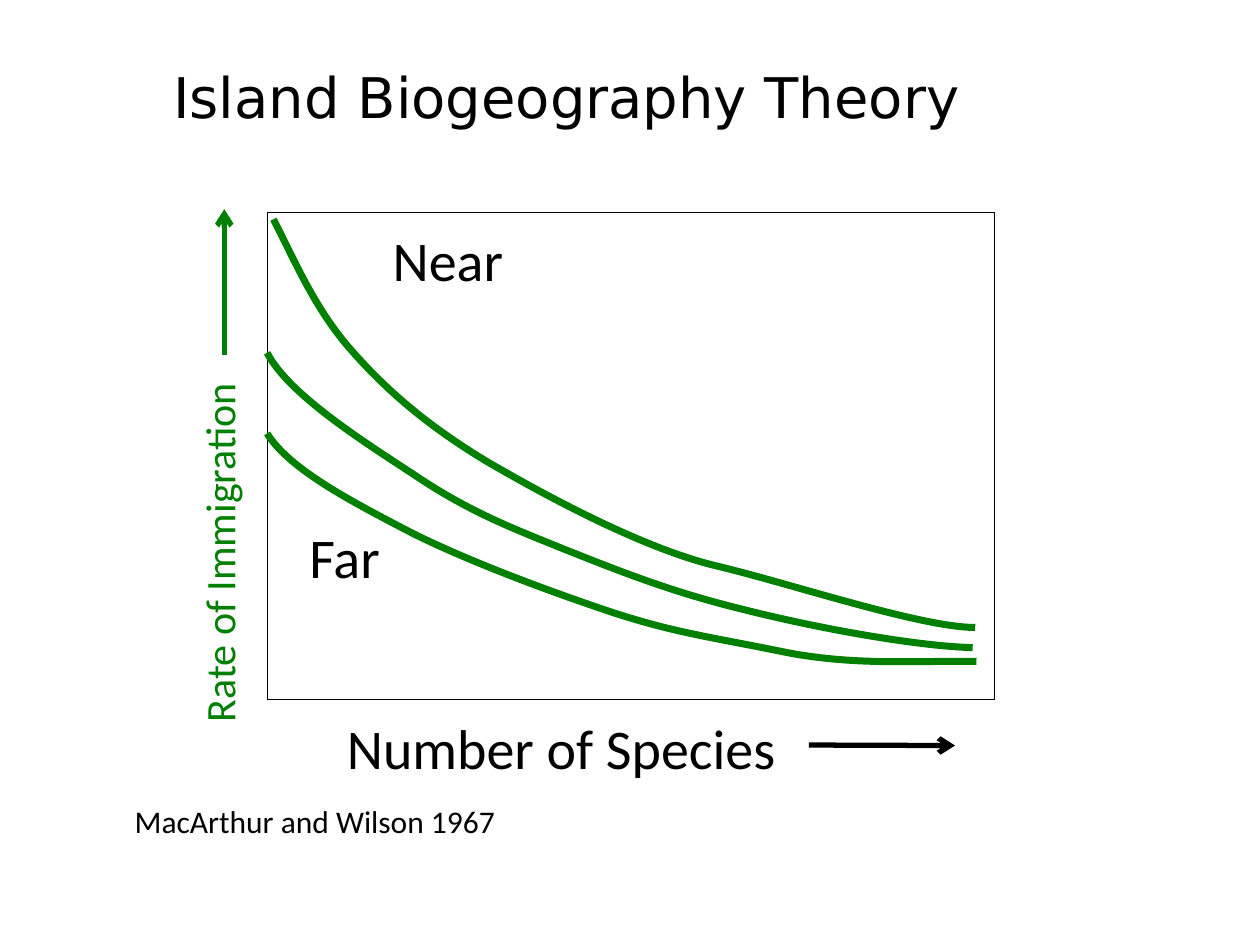
from dataclasses import dataclass

from lxml import etree
from pptx import Presentation
from pptx import util as u
from pptx.dml.color import RGBColor
from pptx.enum import shapes, text
from pptx.oxml.ns import qn

COLORS = {"black": "000000", "green": "008000"}
# The slide is a grid of 100 columns by 75 rows
CELL = u.Inches(0.1)

Point = tuple[float, float]


@dataclass
class Label:
    words: str
    box: tuple[float, float, float, float]  # column, row, columns, rows
    size: int = 32
    color: str = "black"
    align: text.PP_ALIGN = text.PP_ALIGN.LEFT
    rotation: int = 0


@dataclass
class Arrow:
    start: Point
    end: Point
    color: str


LABELS = [
    Label("Number of Species", (26.55, 56.15, 36.8, 6.4)),
    Label("Rate of Immigration", (2.75, 41.2, 29.2, 5), 24, "green", rotation=270),
    Label("MacArthur and Wilson 1967", (9.7, 63.15, 40.8, 5), 18),
    Label("Near", (29.85, 17.4, 11.4, 6.4), align=text.PP_ALIGN.CENTER),
    Label("Far", (23.45, 41, 7.8, 6.4), align=text.PP_ALIGN.CENTER),
]

ARROWS = [
    Arrow((64.2, 59.13), (75.8, 59.17), "black"),
    Arrow((17.8, 28.2), (17.8, 16.6), "green"),
]

# Each curve: a start point, then two control points and an end point per segment
CURVES: list[list[Point]] = [
    [(21.7, 17.4), (23.5, 20.9), (25, 24.5), (27.8, 27.7),
     (30.6, 30.9), (33.8, 33.7), (38.6, 36.6),
     (43.4, 39.4), (51, 43.5), (56.8, 44.9),
     (62.7, 46.3), (73.1, 49.8), (77.4, 49.8)],
    [(21.2, 28), (23, 31.5), (29.6, 35.5), (33.5, 38.1),
     (37.5, 40.7), (40.6, 41.9), (44.8, 43.6),
     (49.1, 45.3), (53.3, 47), (59.1, 48.4),
     (65, 49.9), (72.9, 51.3), (77.2, 51.4)],
    [(21.2, 34.4), (23, 37.3), (28.1, 39.9), (32.7, 42.3),
     (37.3, 44.6), (43.8, 47), (48.6, 48.6),
     (53.5, 50.2), (56.1, 50.5), (62, 51.7),
     (67.8, 52.9), (73.2, 52.4), (77.5, 52.5)],
]


def cells(*counts: float) -> list[int]:
    return [round(count * CELL) for count in counts]


def rgb(color: str) -> RGBColor:
    return RGBColor.from_string(COLORS[color])


def set_line(shape, color: str, width: float) -> None:
    shape.line.color.rgb = rgb(color)
    shape.line.width = u.Pt(width)


def write(shape, words: str, *, size: int = 32, color: str = "black",
          font: str = "Calibri", align: text.PP_ALIGN = text.PP_ALIGN.LEFT) -> None:
    paragraph = shape.text_frame.paragraphs[0]
    paragraph.alignment = align
    run = paragraph.add_run()
    run.text = words
    run.font.size = u.Pt(size)
    run.font.name = font
    run.font.color.rgb = rgb(color)


def add_label(slide, label: Label) -> None:
    shape = slide.shapes.add_textbox(*cells(*label.box))
    shape.rotation = label.rotation
    shape.text_frame.word_wrap = False
    shape.text_frame.auto_size = text.MSO_AUTO_SIZE.SHAPE_TO_FIT_TEXT
    write(shape, label.words, size=label.size, color=label.color, align=label.align)


def add_arrow(slide, arrow: Arrow) -> None:
    connector = slide.shapes.add_connector(
        shapes.MSO_CONNECTOR.STRAIGHT, *cells(*arrow.start, *arrow.end))
    set_line(connector, arrow.color, 3)
    etree.SubElement(connector.line._get_or_add_ln(), qn("a:tailEnd"), type="arrow")
    etree.SubElement(connector._element.spPr, qn("a:effectLst"))


def add_curve(slide, points: list[Point]) -> None:
    """Join the end points with a freeform, then bend each piece into a cubic curve."""
    builder = slide.shapes.build_freeform(*cells(*points[0]))
    builder.add_line_segments([cells(*point) for point in points[3::3]], close=False)
    curve = builder.convert_to_shape()
    for index, piece in enumerate(list(curve._element.iter(qn("a:lnTo")))):
        bend = etree.Element(qn("a:cubicBezTo"))
        for point in points[3 * index + 1:3 * index + 4]:
            x, y = cells(*point)
            etree.SubElement(bend, qn("a:pt"), x=str(x - curve.left), y=str(y - curve.top))
        piece.getparent().replace(piece, bend)
    curve.shadow.inherit = False
    curve.fill.background()
    set_line(curve, "green", 4)


def add_title(slide, words: str) -> None:
    title = slide.shapes.title
    title.left, title.top, title.width, title.height = cells(0, 3, 90, 9.3)
    title.text_frame.vertical_anchor = text.MSO_ANCHOR.MIDDLE
    write(title, words, font="DejaVu Sans", align=text.PP_ALIGN.CENTER)


def add_plot_frame(slide) -> None:
    frame = slide.shapes.add_shape(
        shapes.MSO_SHAPE.RECTANGLE, *cells(21.25, 16.88, 57.7, 38.65))
    frame.shadow.inherit = False
    frame.fill.background()
    set_line(frame, "black", 0.75)


def main() -> None:
    presentation = Presentation()
    presentation.slide_width, presentation.slide_height = cells(100, 75)
    slide = presentation.slides.add_slide(
        presentation.slide_layouts.get_by_name("Title Only"))
    add_title(slide, "Island Biogeography Theory")
    add_plot_frame(slide)
    for arrow in ARROWS:
        add_arrow(slide, arrow)
    for points in CURVES:
        add_curve(slide, points)
    for label in LABELS:
        add_label(slide, label)
    presentation.save("out.pptx")


if __name__ == "__main__":
    main()
